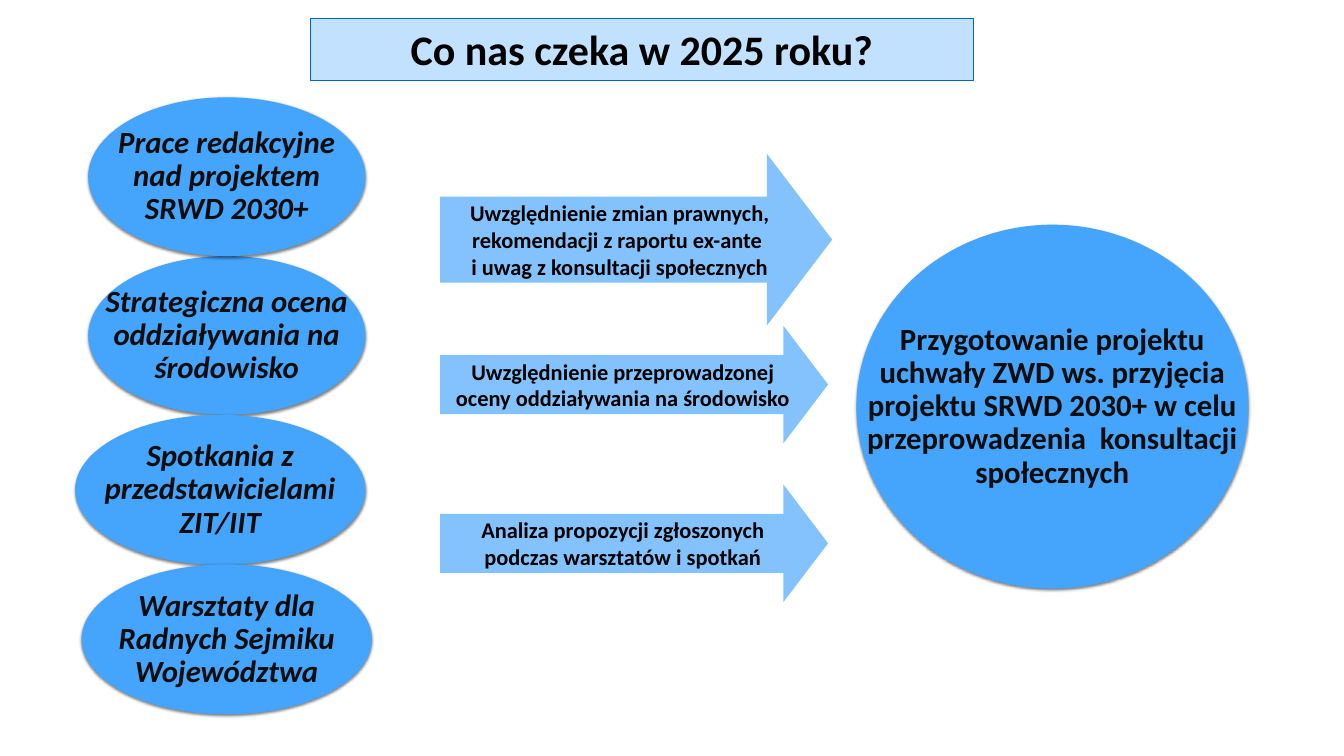
from dataclasses import dataclass

from lxml.etree import SubElement
from pptx import Presentation
from pptx.dml.color import RGBColor
from pptx.enum.shapes import MSO_SHAPE
from pptx.enum.text import MSO_ANCHOR, PP_ALIGN
from pptx.oxml.ns import qn
from pptx.util import Pt


@dataclass(frozen=True)
class Theme:
    font: str = "Calibri"
    title_fill: RGBColor = RGBColor(0xC1, 0xE1, 0xFE)
    title_line: RGBColor = RGBColor(0x03, 0x65, 0xC0)
    oval_fill: RGBColor = RGBColor(0x45, 0xA4, 0xFC)
    arrow_fill: RGBColor = RGBColor(0x83, 0xC2, 0xFD)
    oval_text: RGBColor = RGBColor(0x0D, 0x0D, 0x0D)
    text: RGBColor = RGBColor(0, 0, 0)
    title_size: int = 60
    oval_size: int = 44
    arrow_size: int = 32


theme = Theme()


def write(shape, text, size, color, italic=False):
    """Put one centred bold paragraph in the middle of a shape."""
    frame = shape.text_frame
    frame.word_wrap = True
    frame.vertical_anchor = MSO_ANCHOR.MIDDLE
    paragraph = frame.paragraphs[0]
    paragraph.text = text
    paragraph.alignment = PP_ALIGN.CENTER
    font = paragraph.font
    font.name, font.size, font.bold, font.italic = theme.font, Pt(size), True, italic
    font.color.rgb = color
    return paragraph


def add_plain(kind, left, top, width, height, fill):
    """Add a preset shape with a solid fill, no line and no shadow."""
    shape = slide.shapes.add_shape(kind, Pt(left), Pt(top), Pt(width), Pt(height))
    shape.fill.solid()
    shape.fill.fore_color.rgb = fill
    shape.line.fill.background()
    shape.shadow.inherit = False
    return shape


deck = Presentation()
deck.slide_width, deck.slide_height = Pt(1920), Pt(1080)
slide = deck.slides.add_slide(deck.slide_layouts[5])

# Title in a rounded box
title = slide.shapes.title
title.left, title.top, title.width, title.height = Pt(443.5), Pt(26), Pt(947), Pt(88.5)
outline = SubElement(title._element.spPr, qn("a:prstGeom"), prst="roundRect")
SubElement(outline, qn("a:avLst"))
title.fill.solid()
title.fill.fore_color.rgb = theme.title_fill
title.line.color.rgb = theme.title_line
title.line.width = Pt(1)
write(title, "Co nas czeka w 2025 roku?", theme.title_size, theme.text)

# Activities on the left and the outcome on the right:
# text, left, top, width, height, italic
ovals = [
    ("Strategiczna ocena\voddziaływania na\vśrodowisko", 126, 365.8, 396, 226.8, True),
    ("Przygotowanie projektu\vuchwały ZWD ws. przyjęcia\vprojektu SRWD 2030+ w celu\v"
     "przeprowadzenia  konsultacji\vspołecznych", 1223.5, 321, 560, 520, False),
    ("Prace redakcyjne\vnad projektem\vSRWD 2030+", 126, 139, 396, 226.8, True),
    ("Spotkania z\vprzedstawicielami\vZIT/IIT", 107.3, 592.6, 414.7, 214.4, True),
    ("Warsztaty dla\vRadnych Sejmiku\vWojewództwa", 116.6, 806.2, 414.7, 214.4, True),
]
for text, left, top, width, height, italic in ovals:
    oval = add_plain(MSO_SHAPE.OVAL, left, top, width, height, theme.oval_fill)
    paragraph = write(oval, text, theme.oval_size, theme.oval_text, italic)
    paragraph.line_spacing = 0.9
    oval.text_frame.word_wrap = False

    # Soft shadow straight below
    effects = oval._element.spPr.find(qn("a:effectLst"))
    shadow = SubElement(effects, qn("a:outerShdw"), blurRad=str(Pt(4)),
                        dist=str(Pt(2)), dir="5400000", rotWithShape="0")
    black = SubElement(shadow, qn("a:srgbClr"), val="000000")
    SubElement(black, qn("a:alpha"), val="50000")

# Arrows from activities to outcome: text, top, width, height
arrows = [
    ("Uwzględnienie zmian prawnych, rekomendacji z raportu ex-ante \v"
     "i uwag z konsultacji społecznych", 219.6, 560.2, 245.5),
    ("Uwzględnienie przeprowadzonej oceny oddziaływania na środowisko",
     465.1, 554.4, 168.5),
    ("Analiza propozycji zgłoszonych podczas warsztatów i spotkań",
     691.9, 554.4, 168.5),
]
for text, top, width, height in arrows:
    arrow = add_plain(MSO_SHAPE.RIGHT_ARROW, 628.6, top, width, height, theme.arrow_fill)
    arrow.adjustments[0], arrow.adjustments[1] = 0.5, 0.38
    write(arrow, text, theme.arrow_size, theme.text)

deck.save("out.pptx")
